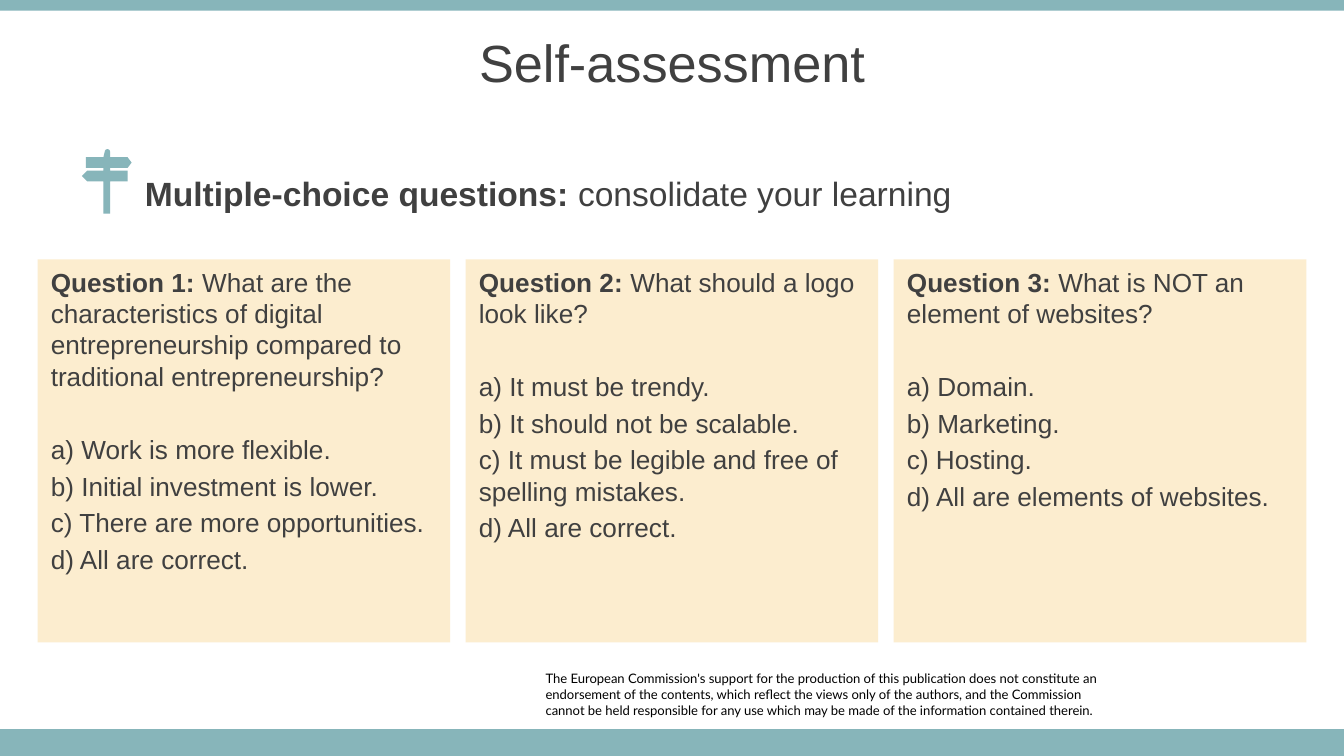
import math

import pptx
import pptx.dml.color
import pptx.enum.shapes
import pptx.enum.text
import pptx.util

IN, PT = pptx.util.Inches, pptx.util.Pt
ALIGN, ANCHOR = pptx.enum.text.PP_ALIGN, pptx.enum.text.MSO_ANCHOR
WIDTH = 10
HEIGHT = WIDTH * 9 / 16
TEAL, CREAM, GREY, BLACK = "87B5BA", "FCEDCF", "404040", "000000"

TITLE = "Self-assessment"
HEADING = ("Multiple-choice questions: ", "consolidate your learning")
QUESTIONS = [
    ("Question 1: ",
     "What are the characteristics of digital entrepreneurship compared to "
     "traditional entrepreneurship?",
     ["a) Work is more flexible.", "b) Initial investment is lower.",
      "c) There are more opportunities.", "d) All are correct."]),
    ("Question 2: ", "What should a logo look like?",
     ["a) It must be trendy.", "b) It should not be scalable.",
      "c) It must be legible and free of spelling mistakes.", "d) All are correct."]),
    ("Question 3: ", "What is NOT an element of websites?",
     ["a) Domain.", "b) Marketing.", "c) Hosting.", "d) All are elements of websites."]),
]
DISCLAIMER = [
    "The European Commission's support for the production of this publication does not "
    "constitute an endorsement of the contents, which reflect the views only of the "
    "authors, and the Commission",
    "cannot be held responsible for any use which may be made of the information "
    "contained therein.",
]

# Signpost: half-round top of the pole, then clockwise around both signs
POLE_X, POLE_R, POLE_TOP = 0.8, 0.02, 1.11
SIGNPOST = [(POLE_X - POLE_R * math.cos(math.pi * i / 8),
             POLE_TOP + POLE_R * (1 - math.sin(math.pi * i / 8))) for i in range(9)] + [
    (0.82, 1.17), (0.95, 1.17), (0.98, 1.21), (0.95, 1.25), (0.82, 1.25),
    (0.82, 1.27), (0.95, 1.27), (0.95, 1.35), (0.82, 1.35), (0.82, 1.59),
    (0.77, 1.59), (0.77, 1.35), (0.65, 1.35), (0.61, 1.31), (0.65, 1.27),
    (0.77, 1.27), (0.77, 1.25), (0.64, 1.25), (0.64, 1.17), (0.77, 1.17)]

MARGIN, CARD_W, CARD_TOP, CARD_H = 0.28, 3.07, 1.93, 2.85
PITCH = (WIDTH - 2 * MARGIN - CARD_W) / (len(QUESTIONS) - 1)
LINE, SPACE = 16.8, 2.8
TOP_BAR, BOTTOM_BAR = 0.08, 0.2


def rgb(color):
    return pptx.dml.color.RGBColor.from_string(color)


def paint(s, color):
    s.shadow.inherit = False
    s.fill.solid()
    s.fill.fore_color.rgb = rgb(color)
    s.line.fill.background()


def add_rect(x, y, w, h, color):
    s = slide.shapes.add_shape(pptx.enum.shapes.MSO_SHAPE.RECTANGLE,
                               IN(x), IN(y), IN(w), IN(h))
    paint(s, color)
    return s


def add_text(x, y, w, h, anchor):
    tf = slide.shapes.add_textbox(IN(x), IN(y), IN(w), IN(h)).text_frame
    tf.word_wrap = True
    tf.vertical_anchor = anchor
    return tf


def write(p, parts, size, color=GREY, font="Arial", align=ALIGN.LEFT):
    """Fill a paragraph; of two parts, the first is bold."""
    p.alignment = align
    p.font.size, p.font.name = PT(size), font
    p.font.color.rgb = rgb(color)
    for i, part in enumerate(parts):
        r = p.add_run()
        r.text = part
        r.font.bold = len(parts) > 1 and i == 0


prs = pptx.Presentation()
prs.slide_width, prs.slide_height = IN(WIDTH), IN(HEIGHT)
slide = prs.slides.add_slide(prs.slide_layouts[6])

tf = add_text(4.06, 4.99, 4.17, 0.35, ANCHOR.TOP)
tf.margin_left = tf.margin_right = tf.margin_top = tf.margin_bottom = 0
for i, line in enumerate(DISCLAIMER):
    write(tf.add_paragraph() if i else tf.paragraphs[0], [line], 7, BLACK, "Lato")

add_rect(0, HEIGHT - BOTTOM_BAR, WIDTH, BOTTOM_BAR, TEAL)
add_rect(0, 0, WIDTH, TOP_BAR, TEAL)

tf = add_text(0, 0.14, WIDTH, 0.63, ANCHOR.MIDDLE)
write(tf.paragraphs[0], [TITLE], 28, align=ALIGN.CENTER)
tf = add_text(0.98, 1.28, 6.69, 0.31, ANCHOR.MIDDLE)
write(tf.paragraphs[0], HEADING, 18)

points = [(IN(x), IN(y)) for x, y in SIGNPOST]
outline = slide.shapes.build_freeform(*points[0])
outline.add_line_segments(points[1:], close=True)
paint(outline.convert_to_shape(), TEAL)

for col, (label, question, answers) in enumerate(QUESTIONS):
    tf = add_rect(MARGIN + col * PITCH, CARD_TOP, CARD_W, CARD_H, CREAM).text_frame
    tf.word_wrap = True
    tf.vertical_anchor = ANCHOR.TOP
    write(tf.paragraphs[0], (label, question), 14)
    for i, answer in enumerate(answers):
        p = tf.add_paragraph()
        p.space_before = PT(SPACE if i else LINE + 2 * SPACE)
        write(p, [answer], 14)
    for p in tf.paragraphs:
        p.line_spacing = PT(LINE)

prs.save("out.pptx")
